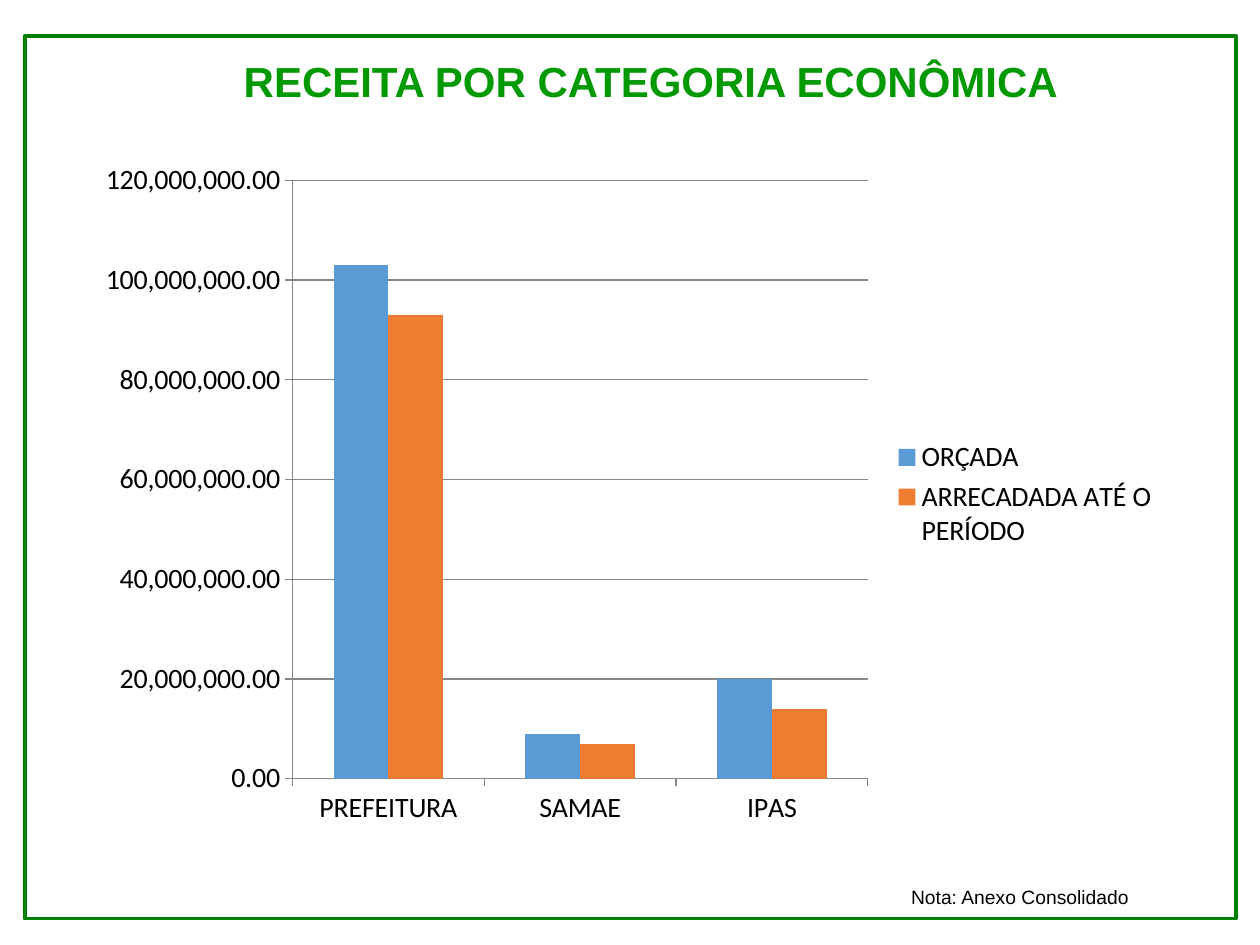
import dataclasses

import pptx
import pptx.chart.data
import pptx.dml.color
import pptx.enum.chart
import pptx.enum.shapes
import pptx.enum.text
import pptx.util

Pt = pptx.util.Pt
XL = pptx.enum.chart
ANCHOR = pptx.enum.text.MSO_ANCHOR
ALIGN = pptx.enum.text.PP_ALIGN


def rgb(color):
    return pptx.dml.color.RGBColor.from_string(color)


@dataclasses.dataclass(frozen=True)
class Theme:
    title: str = "009900"
    frame: str = "008000"
    text: str = "000000"
    grid: str = "878787"
    series: tuple = ("5B9BD5", "ED7D31")
    text_font: str = "Arial"
    chart_font: str = "Calibri"
    title_size: int = 24
    note_size: int = 11
    chart_size: int = 16


def write(tf, text, *, font, size, color, bold=False, align=ALIGN.LEFT, spacing=1.0):
    p = tf.paragraphs[0]
    p.alignment = align
    p.line_spacing = spacing
    r = p.add_run()
    r.text = text
    r.font.name = font
    r.font.size = Pt(size)
    r.font.bold = bold
    r.font.color.rgb = rgb(color)


class SlideBuilder:
    def __init__(self, s, theme):
        self.s = s
        self.theme = theme

    def text(self, box, text, *, anchor=ANCHOR.TOP, left_inset=7.2, **fmt):
        tf = self.s.shapes.add_textbox(*map(Pt, box)).text_frame
        tf.word_wrap = True
        tf.vertical_anchor = anchor
        tf.margin_left = Pt(left_inset)
        write(tf, text, font=self.theme.text_font, **fmt)

    def frame(self, box, width):
        sp = self.s.shapes.add_shape(
            pptx.enum.shapes.MSO_SHAPE.RECTANGLE, *map(Pt, box))
        sp.shadow.inherit = False
        sp.fill.background()
        sp.line.color.rgb = rgb(self.theme.frame)
        sp.line.width = Pt(width)

    def column_chart(self, box, categories, series, number_format):
        data = pptx.chart.data.CategoryChartData(number_format=number_format)
        data.categories = categories
        for name, values in series.items():
            data.add_series(name, values)
        chart = self.s.shapes.add_chart(
            XL.XL_CHART_TYPE.COLUMN_CLUSTERED, *map(Pt, box), data).chart
        chart.has_title = False
        chart.font.name = self.theme.chart_font
        chart.font.size = Pt(self.theme.chart_size)
        chart.font.color.rgb = rgb(self.theme.text)
        chart.has_legend = True
        chart.legend.position = XL.XL_LEGEND_POSITION.RIGHT
        chart.legend.include_in_layout = False

        plot = chart.plots[0]
        plot.vary_by_categories = False
        plot.gap_width = 150
        plot.overlap = 0
        for ser, color in zip(plot.series, self.theme.series):
            ser.format.fill.solid()
            ser.format.fill.fore_color.rgb = rgb(color)

        value_axis = chart.value_axis
        value_axis.has_major_gridlines = True
        value_axis.tick_labels.number_format = number_format
        value_axis.tick_labels.number_format_is_linked = False
        for axis in (chart.category_axis, value_axis):
            axis.major_tick_mark = XL.XL_TICK_MARK.OUTSIDE
            axis.minor_tick_mark = XL.XL_TICK_MARK.NONE
        for part in (chart.category_axis, value_axis, value_axis.major_gridlines):
            part.format.line.color.rgb = rgb(self.theme.grid)
            part.format.line.width = Pt(0.75)


def main():
    prs = pptx.Presentation()
    prs.slide_width, prs.slide_height = Pt(720), Pt(540)
    theme = Theme()
    slide = SlideBuilder(prs.slides.add_slide(prs.slide_layouts[6]), theme)

    slide.text((48, 15, 621, 65.5), "RECEITA POR CATEGORIA ECONÔMICA",
               anchor=ANCHOR.MIDDLE, left_inset=34, size=theme.title_size,
               color=theme.title, bold=True, align=ALIGN.CENTER, spacing=0.9)
    slide.frame((14.2, 20.5, 692, 504.5), 2)
    slide.text((513.5, 502.5, 187, 21), "Nota: Anexo Consolidado",
               size=theme.note_size, color=theme.text)
    slide.column_chart(
        (48, 85.5, 621, 394),
        ("PREFEITURA", "SAMAE", "IPAS"),
        {"ORÇADA": (103000000, 9000000, 20000000),
         "ARRECADADA ATÉ O PERÍODO": (93000000, 7000000, 14000000)},
        "#,##0.00")
    prs.save("out.pptx")


if __name__ == "__main__":
    main()
